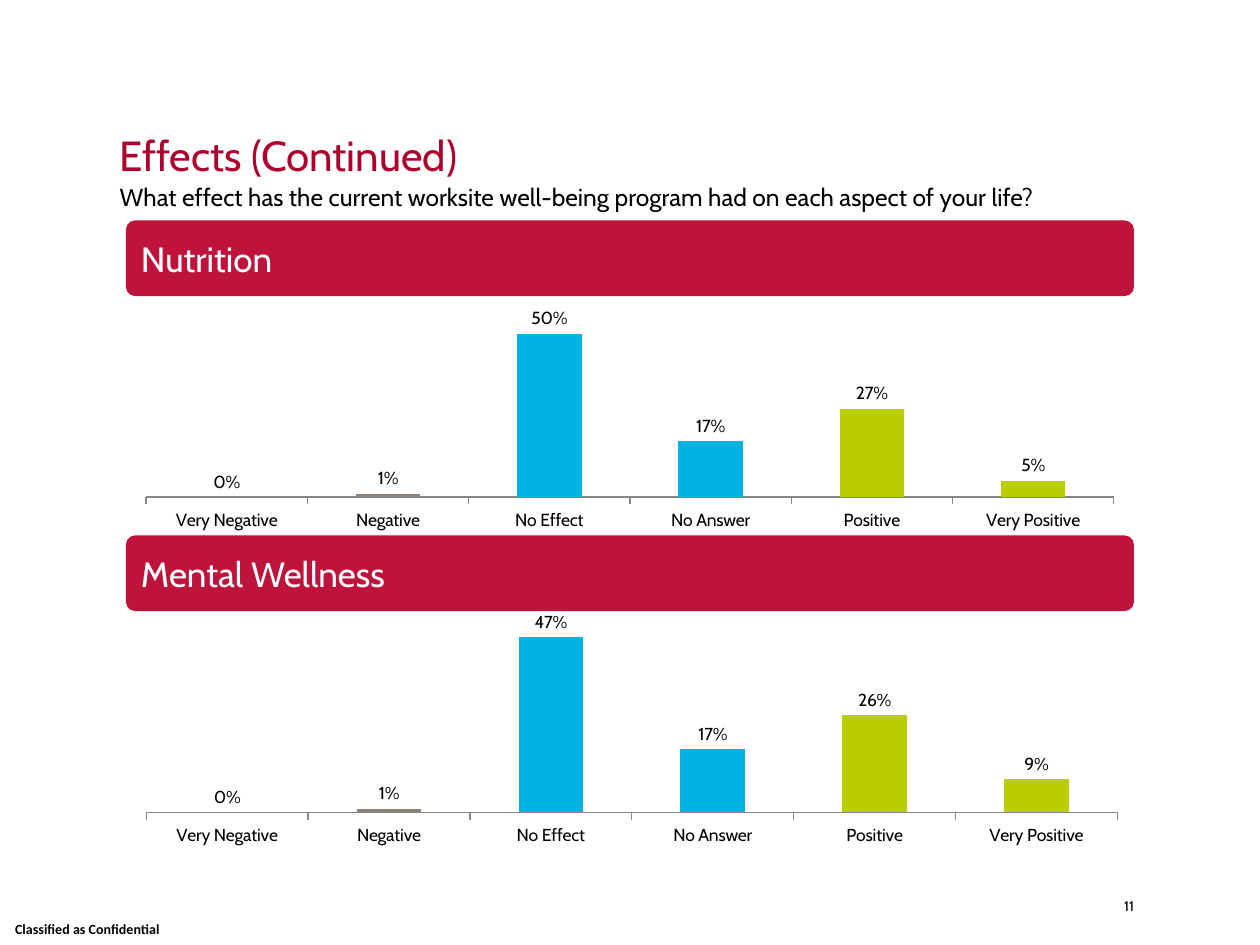
from lxml.etree import SubElement
from pptx import Presentation
from pptx.chart.data import CategoryChartData
from pptx.dml.color import RGBColor
from pptx.enum.chart import XL_CHART_TYPE, XL_LABEL_POSITION, XL_TICK_LABEL_POSITION, XL_TICK_MARK
from pptx.enum.shapes import MSO_SHAPE
from pptx.enum.text import MSO_ANCHOR, PP_ALIGN
from pptx.oxml.ns import qn
from pptx.util import Inches, Pt

# Content
COLORS = {
    "title": "AE002C", "banner": "BE143C", "text": "000000", "white": "FFFFFF",
    "negative": "8D827A", "neutral": "00B3E3", "positive": "B9CD00", "axis": "868686",
}
FONT = "Cabin"
TITLE = "Effects (Continued)"
QUESTION = "What effect has the current worksite well-being program had on each aspect of your life?"
CATEGORIES = [
    ("Very Negative", "negative"), ("Negative", "negative"),
    ("No Effect", "neutral"), ("No Answer", "neutral"),
    ("Positive", "positive"), ("Very Positive", "positive"),
]
# Heading, values, top of the hidden value axis, chart width
SECTIONS = [
    ("Nutrition", [0, 0.01, 0.5, 0.17, 0.27, 0.05], 0.6, 8),
    ("Mental Wellness", [0, 0.01, 0.47, 0.17, 0.26, 0.09], 0.52, 8.03),
]

# Grid, in inches
SLIDE_WIDTH, SLIDE_HEIGHT = 10, 7.5
LEFT, WIDTH = SLIDE_WIDTH * 0.1, SLIDE_WIDTH * 0.8
FIRST_TOP, BANNER_HEIGHT, CHART_HEIGHT = 1.75, 0.6, 1.9
SECTION_STEP = BANNER_HEIGHT + CHART_HEIGHT
PLOT_AREA = {"x": 0.02, "y": 0.02, "w": 0.96, "h": 0.82}  # shares of the chart


def color(name):
    return RGBColor.from_string(COLORS[name])


def style_font(font, size, tint="text", name=FONT, bold=False):
    font.name, font.size, font.bold = name, Pt(size), bold
    font.color.rgb = color(tint)


def write(frame, text, size, tint="text", name=FONT, bold=False,
          anchor=MSO_ANCHOR.TOP, align=PP_ALIGN.LEFT, spacing=1.0):
    frame.word_wrap = True
    frame.vertical_anchor = anchor
    para = frame.paragraphs[0]
    para.alignment, para.line_spacing = align, spacing
    span = para.add_run()
    span.text = text
    style_font(span.font, size, tint, name, bold)


def add_text(page, area, text, size, **style):
    box = page.shapes.add_textbox(*map(Inches, area))
    frame = box.text_frame
    frame.margin_left = frame.margin_right = frame.margin_top = frame.margin_bottom = 0
    write(frame, text, size, **style)


def add_banner(page, top, heading):
    banner = page.shapes.add_shape(
        MSO_SHAPE.ROUNDED_RECTANGLE, *map(Inches, (LEFT, top, WIDTH, BANNER_HEIGHT)))
    banner.adjustments[0] = 0.12
    banner.shadow.inherit = False
    banner.fill.solid()
    banner.fill.fore_color.rgb = color("banner")
    banner.line.fill.background()
    write(banner.text_frame, heading, 20, tint="white", anchor=MSO_ANCHOR.MIDDLE)


def fix_plot_area(chart):
    plot_area = chart.plots[0]._element.getparent()
    layout = plot_area.find(qn("c:layout"))
    if layout is None:
        layout = SubElement(plot_area, qn("c:layout"))
        plot_area.insert(0, layout)
    manual = SubElement(layout, qn("c:manualLayout"))
    settings = [("layoutTarget", "inner"), ("xMode", "edge"), ("yMode", "edge")]
    for tag, value in settings + list(PLOT_AREA.items()):
        SubElement(manual, qn(f"c:{tag}")).set("val", str(value))


def add_chart(page, top, values, maximum, width):
    data = CategoryChartData(number_format="0%")
    data.categories = [label for label, _ in CATEGORIES]
    data.add_series("Series 1", values)
    chart = page.shapes.add_chart(
        XL_CHART_TYPE.COLUMN_CLUSTERED,
        *map(Inches, (LEFT, top, width, CHART_HEIGHT)), data).chart
    style_font(chart.font, 10)
    chart.has_legend = chart.has_title = False
    fix_plot_area(chart)

    # Axes
    scale = chart.value_axis
    scale.minimum_scale, scale.maximum_scale = 0, maximum
    scale.has_major_gridlines = scale.visible = False
    scale.tick_labels.number_format = "0%"
    scale.tick_labels.number_format_is_linked = False
    axis = chart.category_axis
    axis.major_tick_mark = XL_TICK_MARK.OUTSIDE
    axis.tick_label_position = XL_TICK_LABEL_POSITION.LOW
    axis.format.line.color.rgb = color("axis")
    axis.format.line.width = Pt(0.75)

    # Columns and their labels
    plot = chart.plots[0]
    plot.gap_width, plot.vary_by_categories = 150, False
    series = plot.series[0]
    series.format.fill.solid()
    series.format.fill.fore_color.rgb = color("banner")
    for index, (_, tint) in enumerate(CATEGORIES):
        fill = series.points[index].format.fill
        fill.solid()
        fill.fore_color.rgb = color(tint)
    labels = series.data_labels
    labels.show_value = True
    labels.number_format, labels.number_format_is_linked = "0%", False
    labels.position = XL_LABEL_POSITION.OUTSIDE_END
    style_font(labels.font, 10)


def main():
    deck = Presentation()
    deck.slide_width, deck.slide_height = Inches(SLIDE_WIDTH), Inches(SLIDE_HEIGHT)
    page = deck.slides.add_slide(deck.slide_layouts[6])

    # Heading and footer
    add_text(page, (0.12, 7.25, 1.4, 0.25), "Classified as Confidential", 8,
             name="Calibri", bold=True, anchor=MSO_ANCHOR.MIDDLE)
    add_text(page, (0.95, 0.68, WIDTH, 0.75), TITLE, 24, tint="title",
             anchor=MSO_ANCHOR.BOTTOM, spacing=0.9)
    add_text(page, (8.51, 7.12, 0.49, 0.38), "11", 8, align=PP_ALIGN.RIGHT)
    add_text(page, (0.95, 1.4, 8.29, 0.3), QUESTION, 14, spacing=1.2)

    # A banner with its chart below, once per section
    for row, (heading, values, maximum, width) in enumerate(SECTIONS):
        top = FIRST_TOP + row * SECTION_STEP
        add_banner(page, top, heading)
        add_chart(page, top + BANNER_HEIGHT, values, maximum, width)

    deck.save("out.pptx")


if __name__ == "__main__":
    main()
